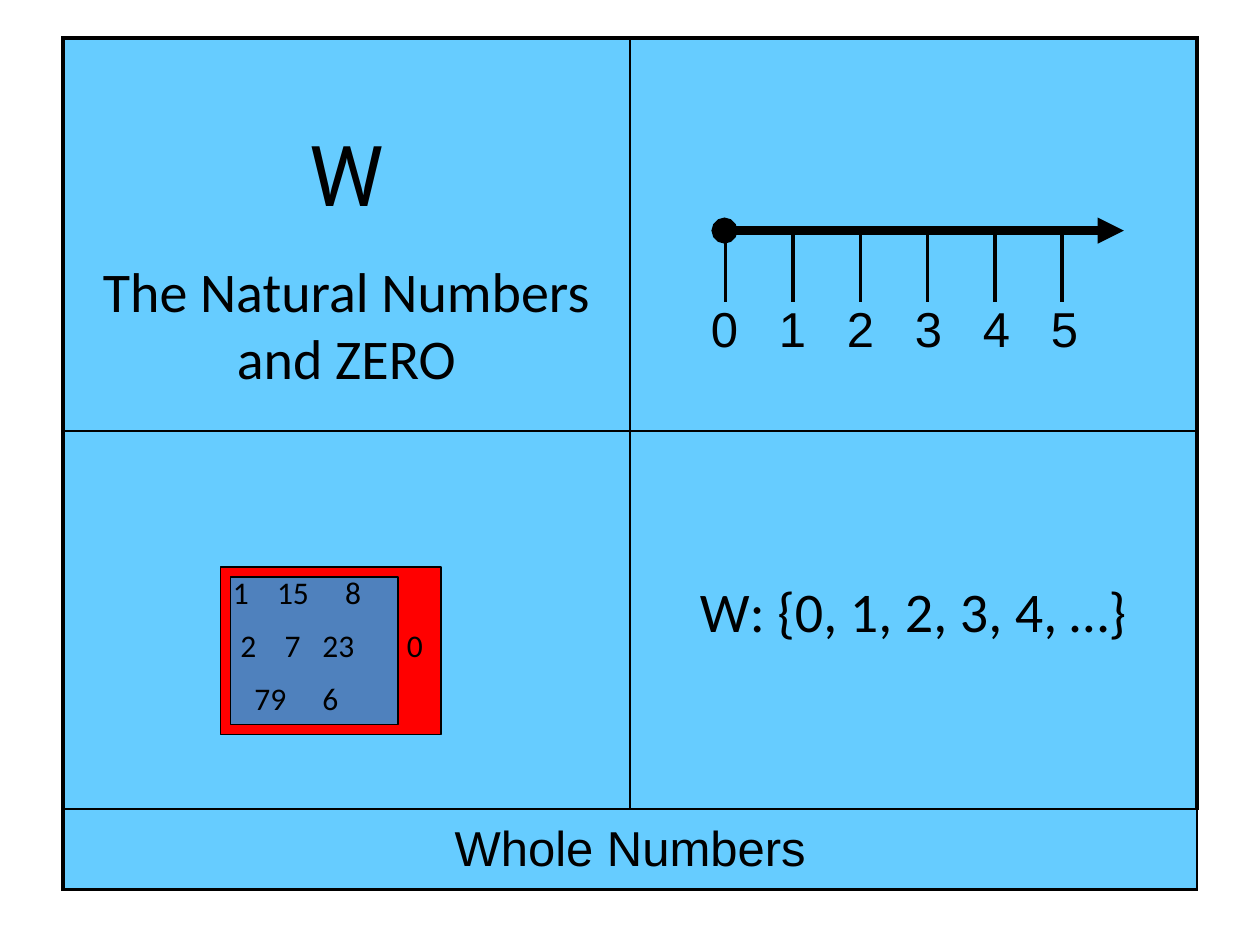
from pptx import Presentation
from pptx.dml.color import RGBColor
from pptx.enum.shapes import MSO_CONNECTOR as Connector, MSO_SHAPE as Shape
from pptx.enum.text import MSO_ANCHOR as Anchor, PP_ALIGN as Align
from pptx.oxml.ns import qn
from pptx.util import Inches, Pt
from lxml.etree import SubElement

BLACK, SKY, RED, BLUE = "000000", "66CCFF", "FF0000", "4F81BD"
THIN, THICK = 1, 2.25


def color(value):
    """Turn a hex string into a colour."""
    return RGBColor.from_string(value)


def style(paragraph, text, font, size, align=Align.CENTER, before=0):
    """Write and format one paragraph."""
    paragraph.text = text
    paragraph.alignment = align
    paragraph.space_before = Pt(before)
    paragraph.font.name = font
    paragraph.font.size = Pt(size)
    paragraph.font.color.rgb = color(BLACK)


def add_text(shapes, left, top, width, height):
    """Add an empty wrapping text box and return its frame."""
    frame = shapes.add_textbox(Inches(left), Inches(top), Inches(width), Inches(height)).text_frame
    frame.word_wrap = True
    return frame


def set_borders(cell, left, right, top, bottom):
    """Give a cell its four border widths in points, zero for none."""
    properties = cell._tc.get_or_add_tcPr()
    sides = zip(("a:lnL", "a:lnR", "a:lnT", "a:lnB"), (left, right, top, bottom))
    for index, (tag, width) in enumerate(sides):
        line = SubElement(properties, qn(tag), w=str(Pt(width)))
        properties.insert(index, line)
        if width:
            fill = SubElement(line, qn("a:solidFill"))
            SubElement(fill, qn("a:srgbClr"), val=BLACK)
        else:
            SubElement(line, qn("a:noFill"))


def add_grid(shapes, left, top, column_widths, row_heights):
    """Add a table without banding or fill."""
    table = shapes.add_table(
        len(row_heights), len(column_widths), Inches(left), Inches(top),
        Inches(sum(column_widths)), Inches(sum(row_heights))).table
    table.first_row = table.horz_banding = False
    for column, width in zip(table.columns, column_widths):
        column.width = Inches(width)
    for row, height in zip(table.rows, row_heights):
        row.height = Inches(height)
    for cell in table.iter_cells():
        cell.fill.background()
        cell.vertical_anchor = Anchor.MIDDLE
    return table


def add_card(shapes, left, top):
    """Add the four-part card with its title row."""
    table = add_grid(shapes, left, top, [4.5, 4.5], [3.12, 3, 0.64])
    for row in range(3):
        for column in range(2):
            cell = table.cell(row, column)
            cell.fill.solid()
            cell.fill.fore_color.rgb = color(SKY)
            set_borders(cell, THIN if column else THICK, THICK if column else THIN,
                        THIN if row else THICK, THICK if row == 2 else THIN)
    title = table.cell(2, 0)
    title.merge(table.cell(2, 1))
    style(title.text_frame.paragraphs[0], "Whole Numbers", "Arial", 28)


def add_definition(shapes, left, top):
    """Add the symbol and its meaning."""
    frame = add_text(shapes, left, top + 0.62, 4.5, 2.26)
    style(frame.paragraphs[0], "W", "Roboto", 48)
    style(frame.add_paragraph(), "The Natural Numbers and ZERO", "Calibri", 32, before=19)


def add_number_line(shapes, left, top):
    """Add the ray with its ticks and labels."""
    axis = top + 1.53
    ray = shapes.add_connector(Connector.STRAIGHT, Inches(left + 0.75), Inches(axis),
                               Inches(left + 3.92), Inches(axis))
    ray.line.color.rgb = color(BLACK)
    ray.line.width = Pt(5)
    line = ray.line._get_or_add_ln()
    SubElement(line, qn("a:headEnd"), type="oval")
    SubElement(line, qn("a:tailEnd"), type="triangle")
    SubElement(ray._element.spPr, qn("a:effectLst"))

    ticks = add_grid(shapes, left + 0.76, axis, [0.534] * 5, [0.57])
    for cell in ticks.iter_cells():
        set_borders(cell, THICK, THICK, THICK, 0)
    labels = add_grid(shapes, left + 0.48, axis + 0.5, [0.54] * 6, [0.58])
    for number, cell in enumerate(labels.iter_cells()):
        set_borders(cell, 0, 0, 0, 0)
        style(cell.text_frame.paragraphs[0], str(number), "Arial", 28)


def add_box(shapes, left, top, width, height, fill):
    """Add a thinly outlined rectangle."""
    box = shapes.add_shape(Shape.RECTANGLE, Inches(left), Inches(top), Inches(width), Inches(height))
    box.shadow.inherit = False
    box.fill.solid()
    box.fill.fore_color.rgb = color(fill)
    box.line.color.rgb = color(BLACK)
    box.line.width = Pt(0.75)


def add_nested_sets(shapes, left, top):
    """Add the natural numbers inside the whole numbers."""
    group = shapes.add_group_shape().shapes
    left, top = left + 1.25, top + 1.08
    add_box(group, left, top, 1.75, 1.33, RED)
    add_box(group, left + 0.08, top + 0.08, 1.33, 1.17, BLUE)
    frame = add_text(group, left, top, 1.75, 1.31)
    rows = [
        ("1\t15\t8", [0.35, 0.89]),
        ("\t2\t7\t23\t0", [0.06, 0.41, 0.71, 1.38]),
        ("\t79\t6", [0.17, 0.71]),
    ]
    for index, (text, stops) in enumerate(rows):
        paragraph = frame.add_paragraph() if index else frame.paragraphs[0]
        tabs = SubElement(paragraph._p.get_or_add_pPr(), qn("a:tabLst"))
        for stop in stops:
            SubElement(tabs, qn("a:tab"), pos=str(Inches(stop)), algn="l")
        style(paragraph, text, "Calibri", 18, Align.LEFT, 8.5 if index else 0)


def add_set_notation(shapes, left, top):
    """Add the set written as a list."""
    frame = add_text(shapes, left, top + 1.11, 4.5, 0.63)
    style(frame.paragraphs[0], "W: {0, 1, 2, 3, 4, …}", "Calibri", 32)


def main():
    """Build and save the slide."""
    presentation = Presentation()
    presentation.slide_width, presentation.slide_height = Inches(10), Inches(7.5)
    shapes = presentation.slides.add_slide(presentation.slide_layouts[6]).shapes
    left, middle, top, center = 0.5, 5, 0.3, 3.42
    add_card(shapes, left, top)
    add_definition(shapes, left, top)
    add_set_notation(shapes, middle, center)
    add_number_line(shapes, middle, top)
    add_nested_sets(shapes, left, center)
    presentation.save("out.pptx")


if __name__ == "__main__":
    main()
